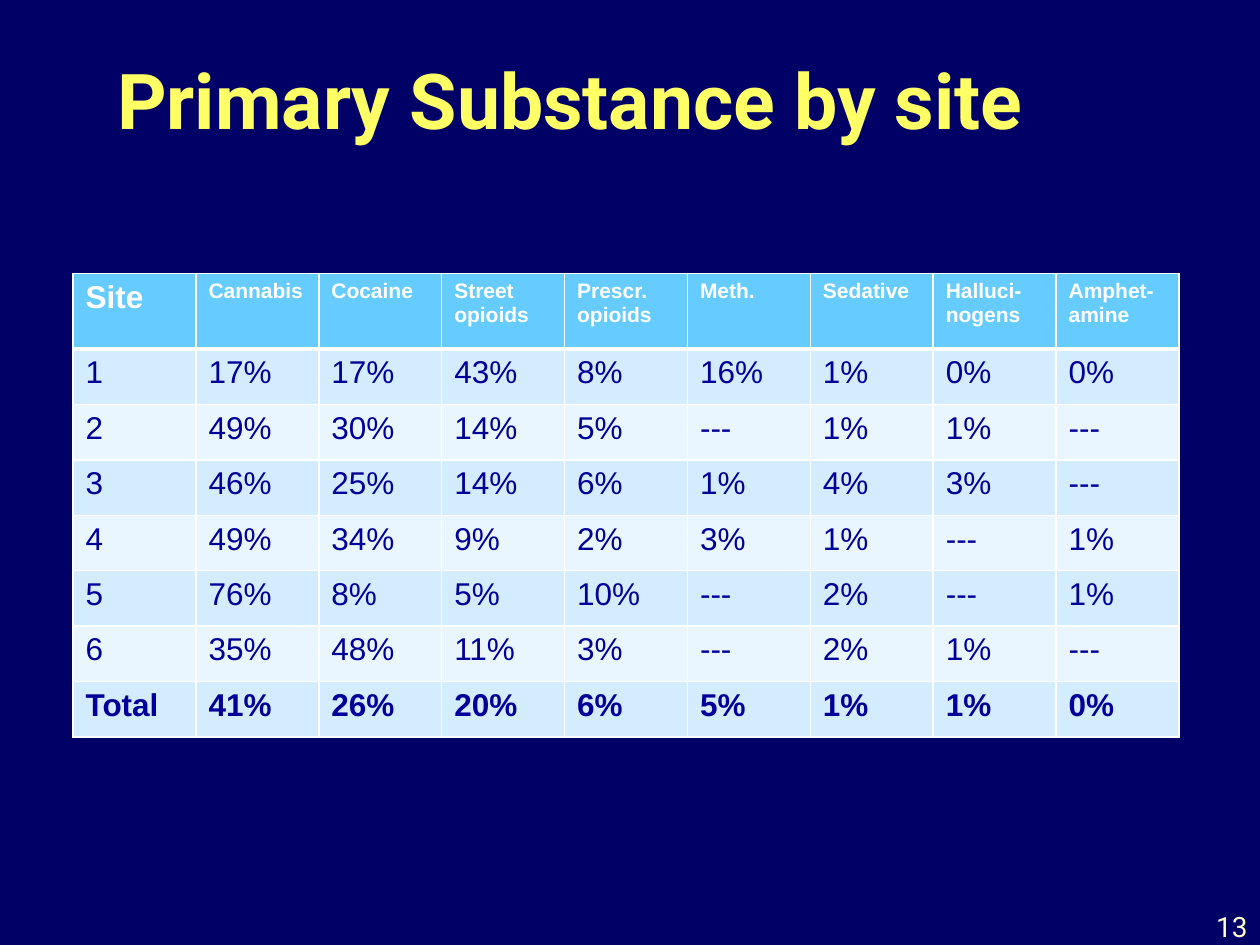
from lxml import etree
from pptx import Presentation
from pptx.dml.color import RGBColor
from pptx.enum.text import MSO_ANCHOR, PP_ALIGN
from pptx.oxml.ns import qn
from pptx.util import Inches, Pt

LEFT, RIGHT = PP_ALIGN.LEFT, PP_ALIGN.RIGHT
MIDDLE = MSO_ANCHOR.MIDDLE

COLORS = {
    "background": "000066",
    "title": "FFFF66",
    "number": "FFFFCC",
    "header": "66CCFF",
    "odd": "D3ECFF",
    "even": "EAF6FF",
    "border": "FFFFFF",
    "header_text": "FFFFFF",
    "body_text": "000099",
}

HEADERS = ["Site", "Cannabis", "Cocaine", "Street opioids", "Prescr. opioids",
           "Meth.", "Sedative", "Halluci-\nnogens", "Amphet-amine"]
SITES = [
    ["1", "17%", "17%", "43%", "8%", "16%", "1%", "0%", "0%"],
    ["2", "49%", "30%", "14%", "5%", "---", "1%", "1%", "---"],
    ["3", "46%", "25%", "14%", "6%", "1%", "4%", "3%", "---"],
    ["4", "49%", "34%", "9%", "2%", "3%", "1%", "---", "1%"],
    ["5", "76%", "8%", "5%", "10%", "---", "2%", "---", "1%"],
    ["6", "35%", "48%", "11%", "3%", "---", "2%", "1%", "---"],
    ["Total", "41%", "26%", "20%", "6%", "5%", "1%", "1%", "0%"],
]
TABLE_WIDTH = 8.78
HEADER_HEIGHT = 0.6
ROW_HEIGHT = 0.44


def color(name):
    return RGBColor.from_string(COLORS[name])


def write(frame, text, color_name, align=LEFT, **font_values):
    frame.text = text
    for para in frame.paragraphs:
        para.alignment = align
        for span in para.runs:
            for key, value in font_values.items():
                setattr(span.font, key, value)
            span.font.color.rgb = color(color_name)


def place(box, left, top, width, height):
    box.left, box.top = Inches(left), Inches(top)
    box.width, box.height = Inches(width), Inches(height)


def set_borders(cell, bottom=1, top=1):
    properties = cell._tc.get_or_add_tcPr()
    sides = {"a:lnL": 1, "a:lnR": 1, "a:lnT": top, "a:lnB": bottom}
    for position, (side, points) in enumerate(sides.items()):
        line = etree.Element(qn(side), w=str(Pt(points)))
        fill = etree.SubElement(line, qn("a:solidFill"))
        etree.SubElement(fill, qn("a:srgbClr"), val=COLORS["border"])
        properties.insert(position, line)


def fill_cell(cell, text, fill_name, color_name, size, bold):
    cell.fill.solid()
    cell.fill.fore_color.rgb = color(fill_name)
    write(cell.text_frame, text, color_name,
          name="Arial", size=Pt(size), bold=bold)


def add_title(page, text):
    title = page.shapes.title
    place(title, 0.83, 0, 8.25, 1.57)
    title.text_frame.vertical_anchor = MIDDLE
    write(title.text_frame, text, "title",
          name="Roboto", size=Pt(44), bold=True)


def add_site_table(page):
    height = HEADER_HEIGHT + ROW_HEIGHT * len(SITES)
    table = page.shapes.add_table(
        len(SITES) + 1, len(HEADERS), Inches(0.58), Inches(2.17),
        Inches(TABLE_WIDTH), Inches(height)).table
    for column in table.columns:
        column.width = Inches(TABLE_WIDTH / len(HEADERS))
    for row in table.rows:
        row.height = Inches(ROW_HEIGHT)
    table.rows[0].height = Inches(HEADER_HEIGHT)

    for index, text in enumerate(HEADERS):
        cell = table.cell(0, index)
        size = 18 if index == 0 else 12
        fill_cell(cell, text, "header", "header_text", size, True)
        set_borders(cell, bottom=3)
    for number, values in enumerate(SITES, 1):
        fill_name = "odd" if number % 2 else "even"
        for index, text in enumerate(values):
            cell = table.cell(number, index)
            fill_cell(cell, text, fill_name, "body_text", 18,
                      values[0] == "Total")
            set_borders(cell, top=3 if number == 1 else 1)


def add_page_number(page, text):
    box = page.shapes.add_textbox(
        Inches(8.92), Inches(7.17), Inches(1.08), Inches(0.5))
    box.text_frame.word_wrap = True
    write(box.text_frame, text, "number", RIGHT, name="Roboto", size=Pt(16))


def main():
    deck = Presentation()
    deck.slide_width, deck.slide_height = Inches(10), Inches(7.5)
    page = deck.slides.add_slide(deck.slide_layouts[5])
    page.background.fill.solid()
    page.background.fill.fore_color.rgb = color("background")
    add_title(page, "Primary Substance by site")
    add_site_table(page)
    add_page_number(page, "13")
    deck.save("out.pptx")


if __name__ == "__main__":
    main()
